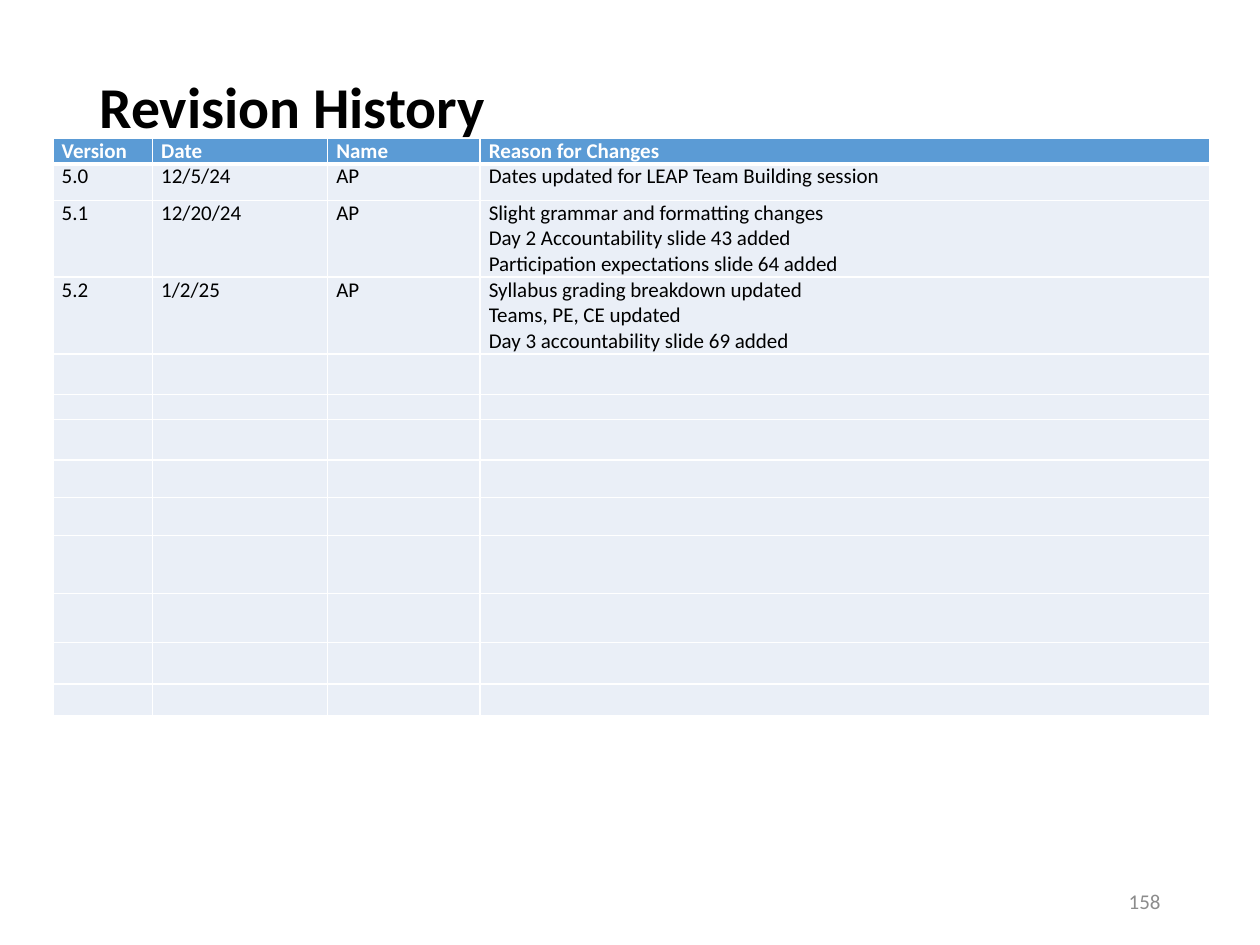
from lxml import etree
from pptx import Presentation
from pptx.dml.color import RGBColor
from pptx.enum.text import MSO_ANCHOR, PP_ALIGN
from pptx.oxml.ns import qn
from pptx.util import Inches, Pt

TOP, MIDDLE = MSO_ANCHOR.TOP, MSO_ANCHOR.MIDDLE
LEFT, RIGHT = PP_ALIGN.LEFT, PP_ALIGN.RIGHT
BLACK = RGBColor(0x00, 0x00, 0x00)
WHITE = RGBColor(0xFF, 0xFF, 0xFF)
GRAY = RGBColor(0x8C, 0x8C, 0x8C)
HEADER_BLUE = RGBColor(0x5B, 0x9B, 0xD5)
ROW_BLUE = RGBColor(0xEA, 0xEF, 0xF7)

COLUMN_WIDTHS = [0.79, 1.39, 1.21, 5.79]
ROW_HEIGHTS = [0.2, 0.29, 0.61, 0.61, 0.32, 0.2, 0.32, 0.3, 0.3, 0.46, 0.39, 0.33, 0.25]
REVISIONS = [
    ["Version", "Date", "Name", "Reason for Changes"],
    ["5.0", "12/5/24", "AP", "Dates updated for LEAP Team Building session"],
    ["5.1", "12/20/24", "AP",
     "Slight grammar and formatting changes\n"
     "Day 2 Accountability slide 43 added\n"
     "Participation expectations slide 64 added"],
    ["5.2", "1/2/25", "AP",
     "Syllabus grading breakdown updated\n"
     "Teams, PE, CE updated\n"
     "Day 3 accountability slide 69 added"],
]


class SlideBuilder:
    font_name = "Calibri"
    body_size = 12

    def __init__(self, page):
        self.page = page

    def style(self, para, size, color, bold=False):
        para.font.name = self.font_name
        para.font.size = Pt(size)
        para.font.bold = bold
        para.font.color.rgb = color

    def text(self, words, left, top, width, height, size, color,
             bold=False, align=LEFT, anchor=MIDDLE, top_inset=0.05):
        box = self.page.shapes.add_textbox(
            Inches(left), Inches(top), Inches(width), Inches(height))
        frame = box.text_frame
        frame.word_wrap = True
        frame.vertical_anchor = anchor
        frame.margin_top = Inches(top_inset)
        frame.text = words
        para = frame.paragraphs[0]
        para.alignment = align
        self.style(para, size, color, bold)
        return para

    def borders(self, cell, bottom_width):
        properties = cell._tc.get_or_add_tcPr()
        for side, width in (("L", 1), ("R", 1), ("T", 1), ("B", bottom_width)):
            line = etree.SubElement(properties, qn(f"a:ln{side}"), w=str(Pt(width)))
            fill = etree.SubElement(line, qn("a:solidFill"))
            etree.SubElement(fill, qn("a:srgbClr"), val=str(WHITE))

    def cell(self, cell, words, is_header):
        cell.margin_left = cell.margin_right = Inches(0.07)
        cell.margin_top = cell.margin_bottom = 0
        self.borders(cell, 3 if is_header else 1)
        cell.fill.solid()
        cell.fill.fore_color.rgb = HEADER_BLUE if is_header else ROW_BLUE
        cell.text = words
        for para in cell.text_frame.paragraphs:
            self.style(para, self.body_size, WHITE if is_header else BLACK, is_header)
            if not words:
                etree.SubElement(para._p, qn("a:endParaRPr"), sz=str(self.body_size * 100))

    def table(self, rows, left, top, column_widths, row_heights):
        table = self.page.shapes.add_table(
            len(row_heights), len(column_widths), Inches(left), Inches(top),
            Inches(sum(column_widths)), Inches(sum(row_heights))).table
        table.horz_banding = False
        for column, width in zip(table.columns, column_widths):
            column.width = Inches(width)
        for row_index, height in enumerate(row_heights):
            row = table.rows[row_index]
            row.height = Inches(height)
            values = rows[row_index] if row_index < len(rows) else [""] * len(column_widths)
            for cell, words in zip(row.cells, values):
                self.cell(cell, words, row_index == 0)


def main():
    deck = Presentation()
    deck.slide_width, deck.slide_height = Inches(10), Inches(7.5)
    builder = SlideBuilder(deck.slides.add_slide(deck.slide_layouts[6]))
    title = builder.text("Revision History", 0.69, 0.4, 8.62, 1.45, 33, BLACK,
                         bold=True, anchor=TOP, top_inset=0.22)
    title.line_spacing = 0.9
    builder.table(REVISIONS, 0.42, 1.1, COLUMN_WIDTHS, ROW_HEIGHTS)
    builder.text("158", 7.06, 6.95, 2.25, 0.4, 12, GRAY, align=RIGHT)
    deck.save("out.pptx")


if __name__ == "__main__":
    main()
